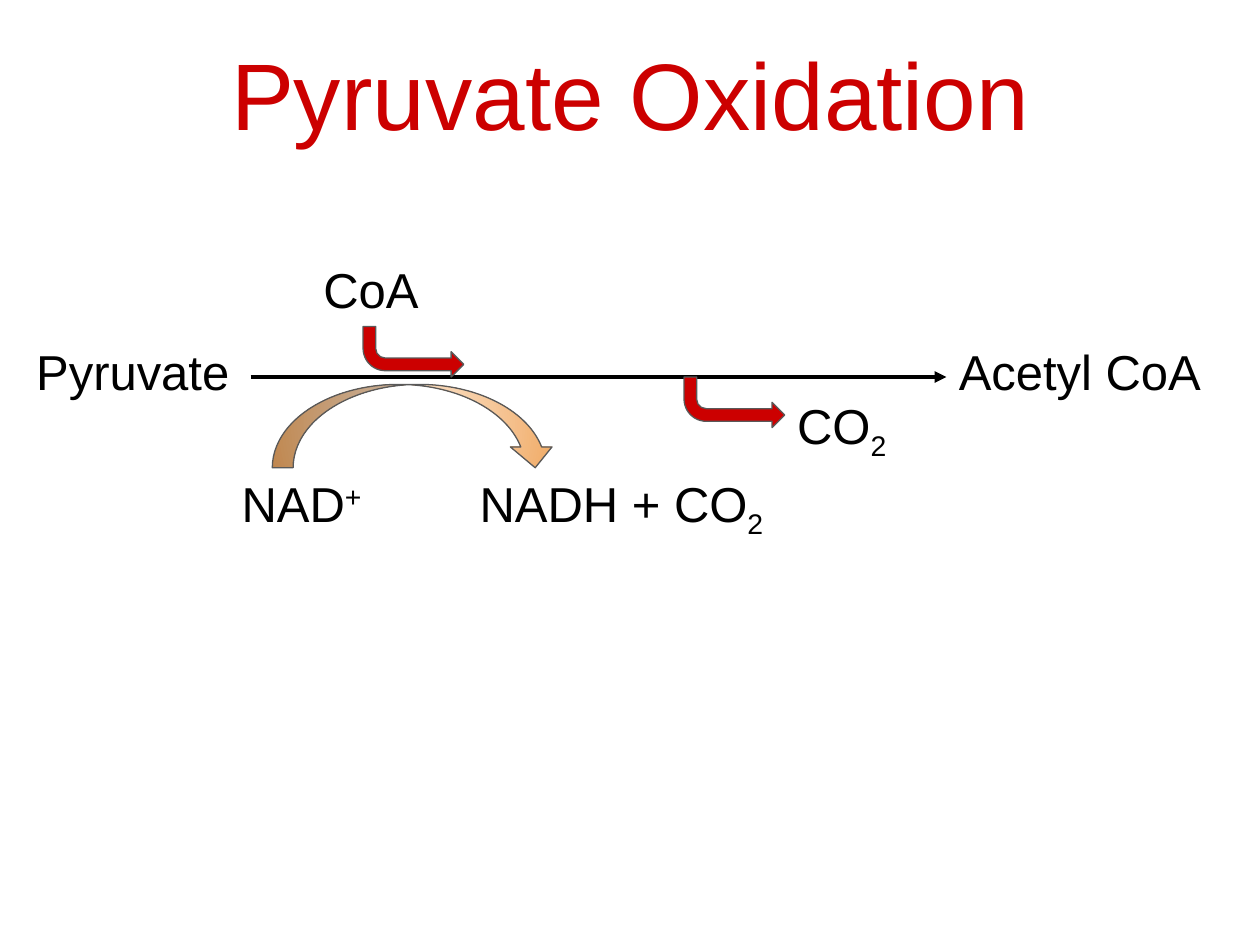
from lxml import etree
from pptx import Presentation
from pptx.dml.color import RGBColor
from pptx.enum.shapes import MSO_CONNECTOR, MSO_SHAPE
from pptx.enum.text import PP_ALIGN
from pptx.oxml.ns import qn
from pptx.util import Cm, Pt

STRAIGHT = MSO_CONNECTOR.STRAIGHT
BENT_ARROW = MSO_SHAPE.BENT_ARROW
CURVED_ARROW = MSO_SHAPE.CURVED_DOWN_ARROW
LEFT, CENTER = PP_ALIGN.LEFT, PP_ALIGN.CENTER

LEFT_SIDE, RIGHT_SIDE = 1, 3
BLANK_LAYOUT = 6
LABEL_HEIGHT = 1.68


def color(hex_value):
    return RGBColor.from_string(hex_value)


class Diagram:
    font = "Arial"
    ink = "000000"
    accent = "CC0000"
    outline = "595959"
    glow = ("FDECDB", "F0A963")

    def __init__(self, page):
        self.page = page

    def text(self, content, left, top, width, height=LABEL_HEIGHT, *,
             size=28, ink=None, align=LEFT, script="", baseline=0):
        """Add a text box; script is a raised or lowered ending, baseline in percent."""
        box = self.page.shapes.add_textbox(Cm(left), Cm(top), Cm(width), Cm(height))
        box.text_frame.word_wrap = True
        para = box.text_frame.paragraphs[0]
        para.alignment = align
        for part, shift in ((content, 0), (script, baseline)):
            if not part:
                continue
            span = para.add_run()
            span.text = part
            span.font.name = self.font
            span.font.size = Pt(size)
            span.font.color.rgb = color(ink or self.ink)
            if shift:
                span.font._element.set("baseline", str(shift * 1000))
        return box

    def reaction_arrow(self, source, target):
        arrow = self.page.shapes.add_connector(STRAIGHT, 0, 0, 0, 0)
        arrow.begin_connect(source, RIGHT_SIDE)
        arrow.end_connect(target, LEFT_SIDE)
        arrow.line.color.rgb = color(self.ink)
        arrow.line.width = Pt(2.25)
        etree.SubElement(arrow.line._get_or_add_ln(), qn("a:tailEnd"), type="triangle")
        etree.SubElement(arrow._element.spPr, qn("a:effectLst"))

    def block_arrow(self, kind, left, top, width, height, adjustments):
        arrow = self.page.shapes.add_shape(kind, Cm(left), Cm(top), Cm(width), Cm(height))
        arrow.shadow.inherit = False
        arrow.line.color.rgb = color(self.outline)
        arrow.line.width = Pt(0.75)
        for index, value in enumerate(adjustments):
            arrow.adjustments[index] = value
        return arrow

    def bent_arrow(self, left, top):
        """Add an arrow that goes down and then turns right."""
        arrow = self.block_arrow(BENT_ARROW, left, top, 2.03, 1.02,
                                 (0.25, 0.25, 0.25, 0.44))
        arrow.fill.solid()
        arrow.fill.fore_color.rgb = color(self.accent)
        arrow.rotation = 180
        arrow._element.spPr.xfrm.set("flipH", "1")

    def curved_arrow(self, left, top, width, height):
        arrow = self.block_arrow(CURVED_ARROW, left, top, width, height,
                                 (0.25, 0.5, 0.25))
        arrow.fill.gradient()
        for stop, position, hex_value in zip(arrow.fill.gradient_stops, (0, 1), self.glow):
            stop.position = position
            stop.color.rgb = color(hex_value)
        gradient = arrow._element.spPr.find(qn("a:gradFill"))
        gradient.remove(gradient.find(qn("a:lin")))
        radial = etree.SubElement(gradient, qn("a:path"))
        radial.set("path", "circle")
        etree.SubElement(radial, qn("a:fillToRect"),
                         {side: "50000" for side in "ltrb"})


def main():
    deck = Presentation()
    deck.slide_width, deck.slide_height = Cm(25.4), Cm(19.05)
    diagram = Diagram(deck.slides.add_slide(deck.slide_layouts[BLANK_LAYOUT]))

    diagram.text("Pyruvate Oxidation", 0.64, 0.61, 24.13, 2.11,
                 size=54, ink=diagram.accent, align=CENTER)

    main_row, carrier_row = 6.76, 9.42
    pyruvate = diagram.text("Pyruvate", 0.48, main_row, 4.57)
    acetyl = diagram.text("Acetyl CoA", 19.08, main_row, 5.41)
    diagram.reaction_arrow(pyruvate, acetyl)

    diagram.curved_arrow(5.49, 7.75, 5.72, 1.68)
    diagram.text("NAD", 4.62, carrier_row, 3.2, script="+", baseline=30)
    diagram.text("NADH + CO", 9.42, carrier_row, 6.45, script="2", baseline=-25)

    diagram.bent_arrow(7.32, 6.58)
    diagram.text("CoA", 6.27, 5.1, 2.59)
    diagram.bent_arrow(13.79, 7.6)
    diagram.text("CO", 15.82, 7.85, 2.59, script="2", baseline=-25)

    deck.save("out.pptx")


if __name__ == "__main__":
    main()
